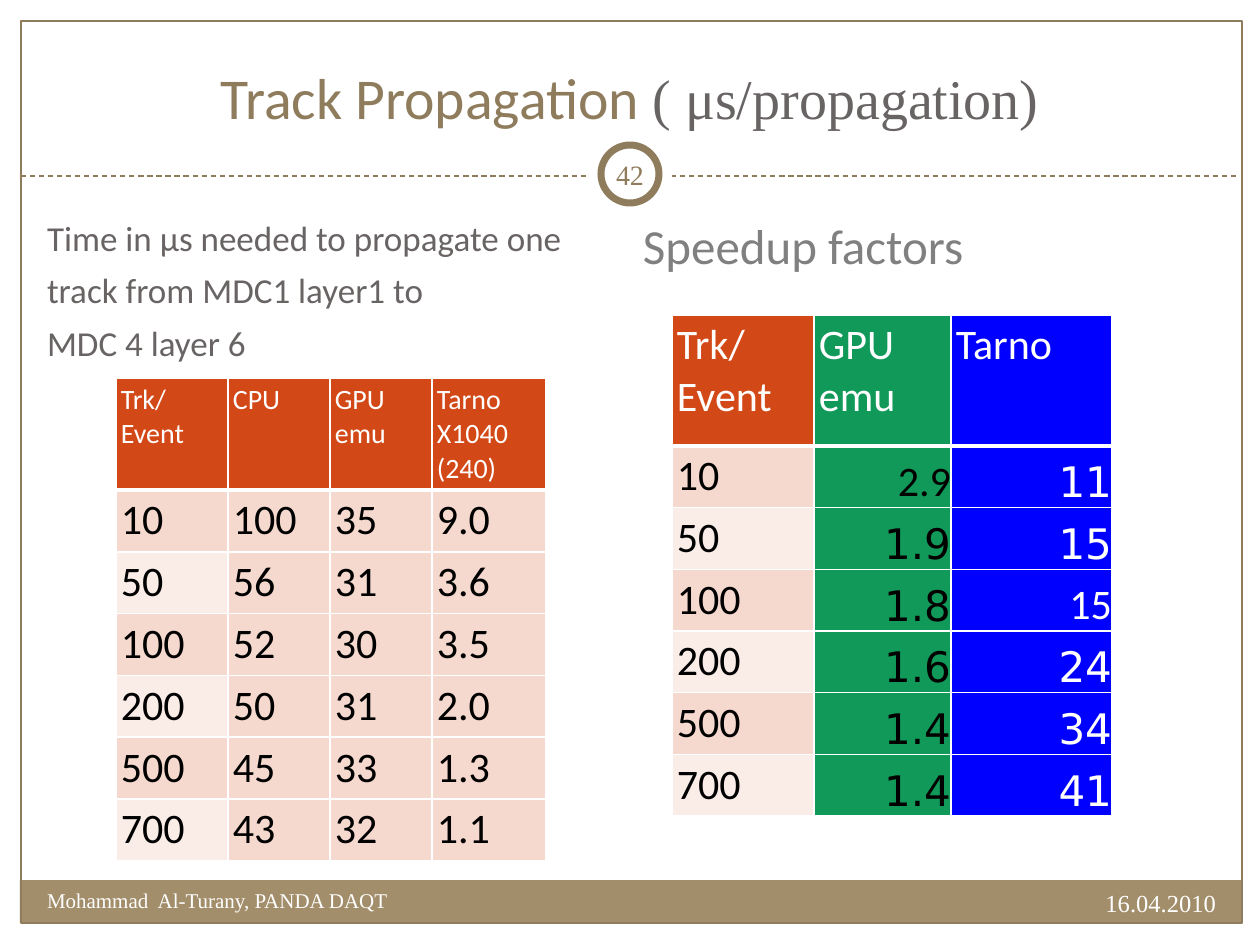
import pptx
import pptx.dml.color
import pptx.enum.dml
import pptx.enum.shapes
import pptx.enum.text
import pptx.oxml
import pptx.oxml.ns
import pptx.util

SCALE = 914400 / 126
COLOURS = {
    "white": "FFFFFF", "black": "000000", "bronze": "8E7C5D", "sand": "A28E6A",
    "slate": "696464", "grey": "808080", "orange": "D34817", "blush": "F5D9CE",
    "pale": "FAEDE8", "green": "119959", "blue": "0000FF",
}
SANS, SERIF, DIGITS = "Calibri", "Times New Roman", "DejaVu Sans"
ALIGN = pptx.enum.text.PP_ALIGN
ANCHOR = pptx.enum.text.MSO_ANCHOR
SHAPE = pptx.enum.shapes.MSO_SHAPE

EVENTS = ["10", "50", "100", "200", "500", "700"]
TIMES = {
    "CPU": ["100", "56", "52", "50", "45", "43"],
    "GPU\nemu": ["35", "31", "30", "31", "33", "32"],
    "Tarno\nX1040\n(240)": ["9.0", "3.6", "3.5", "2.0", "1.3", "1.1"],
}
SPEEDUPS = {
    "GPU\nemu": ["2.9", "1.9", "1.8", "1.6", "1.4", "1.4"],
    "Tarno": ["11", "15", "15", "24", "34", "41"],
}
SANS_SPEEDUPS = {(1, 1), (3, 2)}


def px(length):
    """Turn a length in px into EMU."""
    return pptx.util.Emu(round(length * SCALE))


def rgb(name):
    """Look up a named colour."""
    return pptx.dml.color.RGBColor.from_string(COLOURS[name])


def set_font(font, size, face, colour):
    """Give a font its size, face and colour."""
    font.size, font.name, font.bold = pptx.util.Pt(size), face, False
    font.color.rgb = rgb(colour)


def fill_paragraphs(frame, text, size, face, colour, align=ALIGN.LEFT, before=0):
    """Write each line of the text as one paragraph."""
    for index, line in enumerate(text.split("\n")):
        para = frame.paragraphs[0] if index == 0 else frame.add_paragraph()
        para.text, para.alignment = line, align
        if index and before:
            para.space_before = pptx.util.Pt(before)
        set_font(para.font, size, face, colour)


def set_margins(item, margin):
    """Give a text frame or cell the same margin on every side."""
    item.margin_left = item.margin_right = px(margin)
    item.margin_top = item.margin_bottom = px(margin)


def add_text(page, box, text, size, face, colour, align=ALIGN.LEFT, before=0, margin=5):
    """Add a wrapping text box."""
    frame = page.shapes.add_textbox(*map(px, box)).text_frame
    frame.word_wrap = True
    set_margins(frame, margin)
    fill_paragraphs(frame, text, size, face, colour, align, before)
    return frame


def add_plain_shape(page, kind, box, fill=None, line=None, width=0.75):
    """Add a flat shape with an optional fill and outline."""
    shape = page.shapes.add_shape(kind, *map(px, box))
    shape.shadow.inherit = False
    if fill:
        shape.fill.solid()
        shape.fill.fore_color.rgb = rgb(fill)
    else:
        shape.fill.background()
    if line:
        shape.line.color.rgb = rgb(line)
        shape.line.width = pptx.util.Pt(width)
    else:
        shape.line.fill.background()


def draw_footer(page, box):
    """Draw the footer band with the speaker and the date."""
    left, top, width, height = box
    add_plain_shape(page, SHAPE.RECTANGLE, box, "sand")
    add_text(page, (left + 22, top + 3, 496, 36), "Mohammad  Al-Turany, PANDA DAQT",
             12, SERIF, "white")
    add_text(page, (left + width - 443, top + 3, 423, 37), "16.04.2010",
             14, SERIF, "white", ALIGN.RIGHT)


def draw_badge(page, box):
    """Draw the page number centred in a ring on a white disc."""
    left, top, size, _ = box
    for inset, outline in ((0, None), (13, "bronze")):
        add_plain_shape(page, SHAPE.OVAL,
                        (left + inset, top + inset, size - 2 * inset, size - 2 * inset),
                        "white", outline, 4)
    number = add_text(page, (left + 22, top + 22, size - 44, size - 44), "42",
                      16, SERIF, "bronze", ALIGN.CENTER, margin=0)
    number.vertical_anchor = ANCHOR.MIDDLE


def draw_frame(page, box):
    """Draw the page border, the dashed divider and the page number badge."""
    left, top, width, height = box
    add_plain_shape(page, SHAPE.RECTANGLE, box, line="bronze")
    divider = top + 155
    rule = page.shapes.add_connector(
        pptx.enum.shapes.MSO_CONNECTOR.STRAIGHT,
        px(left), px(divider), px(left + width - 4), px(divider))
    rule.line.color.rgb = rgb("bronze")
    rule.line.width = pptx.util.Pt(0.75)
    rule.line.dash_style = pptx.enum.dml.MSO_LINE.DASH
    rule._element.spPr.append(pptx.oxml.parse_xml(
        f'<a:effectLst {pptx.oxml.ns.nsdecls("a")}/>'))
    draw_badge(page, (left + 567, divider - 44, 84, 84))


def place_title(page, box):
    """Place the two-toned title."""
    title = page.shapes.title
    title.left, title.top, title.width, title.height = map(px, box)
    frame = title.text_frame
    frame.auto_size = pptx.enum.text.MSO_AUTO_SIZE.NONE
    frame.vertical_anchor = ANCHOR.BOTTOM
    set_margins(frame, 5)
    para = frame.paragraphs[0]
    para.alignment = ALIGN.CENTER
    for text, size, face, colour in (
            ("Track Propagation ", 33, SANS, "bronze"),
            ("( μs/propagation)", 32, SERIF, "slate")):
        span = para.add_run()
        span.text = text
        set_font(span.font, size, face, colour)


def set_borders(cell, row):
    """Draw white cell borders, heavier below the header row."""
    widths = {"L": 1, "R": 1, "T": 3 if row == 1 else 1, "B": 3 if row == 0 else 1}
    properties = cell._tc.get_or_add_tcPr()
    for index, (side, width) in enumerate(widths.items()):
        properties.insert(index, pptx.oxml.parse_xml(
            f'<a:ln{side} {pptx.oxml.ns.nsdecls("a")} w="{width * 12700}"><a:solidFill>'
            f'<a:srgbClr val="{COLOURS["white"]}"/></a:solidFill></a:ln{side}>'))


def write_cell(cell, row, text, fill, size, face, colour, figures=False):
    """Fill one table cell, with figures set bottom right."""
    set_margins(cell, 0 if figures else 5)
    if figures:
        cell.vertical_anchor = ANCHOR.BOTTOM
    align = ALIGN.RIGHT if figures else ALIGN.LEFT
    fill_paragraphs(cell.text_frame, text, size, face, colour, align)
    cell.fill.solid()
    cell.fill.fore_color.rgb = rgb(fill)
    set_borders(cell, row)


def add_grid(page, box, widths, header_height, columns, header_size, style):
    """Add a table whose first column lists the tracks per event."""
    columns = {"Trk/Event": EVENTS, **columns}
    rows = len(EVENTS) + 1
    grid = page.shapes.add_table(rows, len(columns), *map(px, box)).table
    grid.horz_banding = False
    for column, width in zip(grid.columns, widths):
        column.width = px(width)
    grid.rows[0].height = px(header_height)
    for row in range(1, rows):
        grid.rows[row].height = px((box[3] - header_height) / (rows - 1))
    for column, (heading, values) in enumerate(columns.items()):
        header_fill = style(0, column)[0]
        write_cell(grid.cell(0, column), 0, heading, header_fill, header_size, SANS, "white")
        for row, value in enumerate(values, 1):
            fill, face, colour, figures = style(row, column)
            write_cell(grid.cell(row, column), row, value, fill, 24, face, colour, figures)


def time_style(row, column):
    """Return fill, face, colour and figure setting for a time cell."""
    if row == 0:
        return "orange", SANS, "white", False
    banded = column == 0 and row % 2 == 0
    return "pale" if banded else "blush", SANS, "black", False


def speedup_style(row, column):
    """Return fill, face, colour and figure setting for a speedup cell."""
    if column == 0:
        return time_style(row, column)
    face = SANS if (row, column) in SANS_SPEEDUPS else DIGITS
    fill, colour = (("green", "black"), ("blue", "white"))[column - 1]
    return fill, face, colour, True


def draw_times(page, box):
    """Draw the propagation times with their caption."""
    left, top, width, height = box
    add_text(page, box, "Time in μs needed to propagate one\ntrack from MDC1 layer1 to\n"
             "MDC 4 layer 6", 20, SANS, "slate", before=6)
    add_grid(page, (left + 74, top + 167, 430, 483), (112, 102, 102, 114), 112,
             TIMES, 16, time_style)


def draw_speedups(page, box):
    """Draw the speedup factors with their caption."""
    left, top, width, height = box
    add_text(page, box, "Speedup factors", 28, SANS, "grey")
    add_grid(page, (left + 34, top + 104, 440, 501), (142, 137, 161), 131,
             SPEEDUPS, 24, speedup_style)


def main():
    """Build and save the deck."""
    deck = pptx.Presentation()
    deck.slide_width, deck.slide_height = px(1260), px(945)
    page = deck.slides.add_slide(deck.slide_layouts[5])
    draw_footer(page, (20, 880, 1221, 43))
    draw_frame(page, (21, 21, 1221, 902))
    place_title(page, (42, 0, 1176, 136))
    draw_times(page, (42, 211, 576, 735))
    draw_speedups(page, (638, 211, 576, 735))
    deck.save("out.pptx")


if __name__ == "__main__":
    main()
